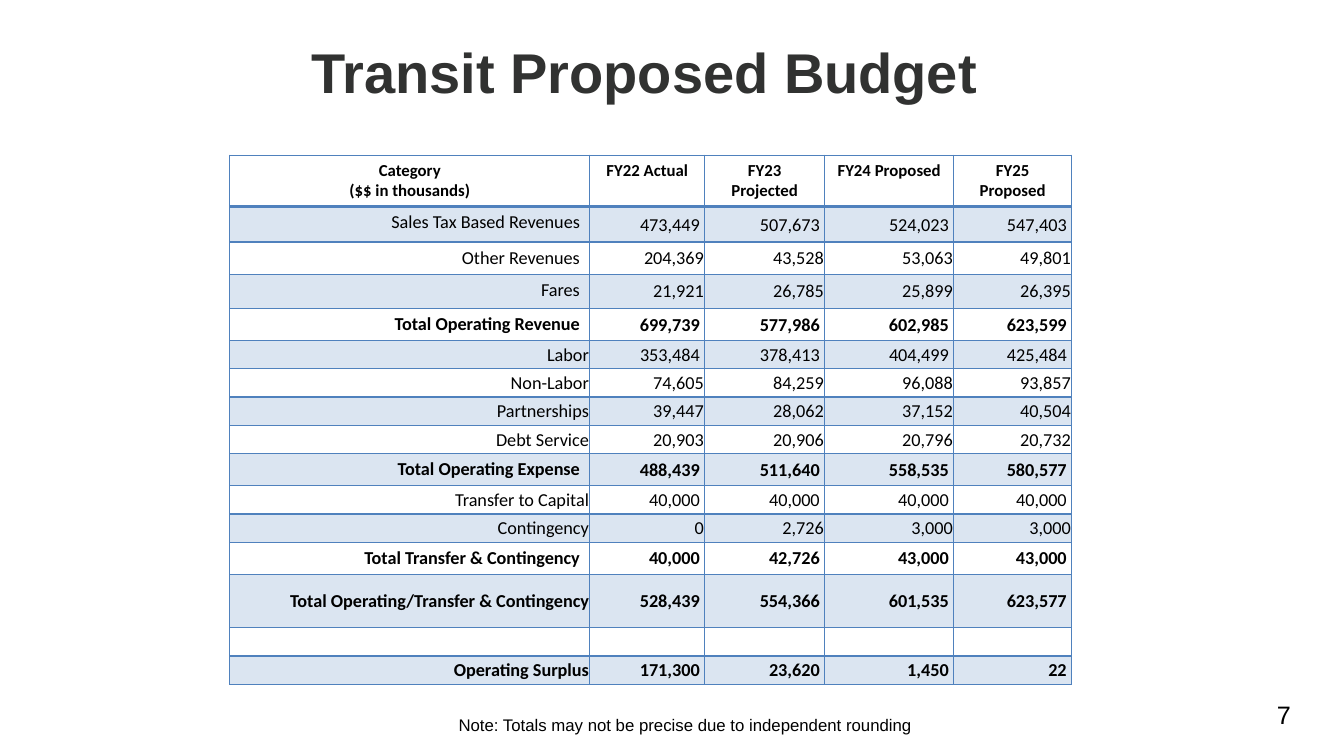
from lxml.etree import SubElement
from pptx import Presentation
from pptx.dml.color import RGBColor
from pptx.enum.text import MSO_ANCHOR as Anchor, PP_ALIGN as Align
from pptx.oxml.ns import qn
from pptx.util import Inches, Pt

COLORS = {"title": "313231", "text": "000000", "table": "4F81BD"}
ROOMY = {"margin_left": 0.1, "margin_right": 0.1, "margin_top": 0.05, "margin_bottom": 0.05}
TIGHT = {"margin_left": 0.01, "margin_right": 0.01, "margin_top": 0.01, "margin_bottom": 0}

HEADERS = ["Category\n($$ in thousands)", "FY22 Actual", "FY23 Projected",
           "FY24 Proposed", "FY25 Proposed"]
# Label, values, row height, bold, roomy label, values set in from the border
BUDGET = [
    ("Sales Tax Based Revenues", "473,449 507,673 524,023 547,403", 0.35, False, True, True),
    ("Other Revenues", "204,369 43,528 53,063 49,801", 0.32, False, True, False),
    ("Fares", "21,921 26,785 25,899 26,395", 0.34, False, True, False),
    ("Total Operating Revenue", "699,739 577,986 602,985 623,599", 0.32, True, True, True),
    ("Labor", "353,484 378,413 404,499 425,484", 0.28, False, False, True),
    ("Non-Labor", "74,605 84,259 96,088 93,857", 0.28, False, False, False),
    ("Partnerships", "39,447 28,062 37,152 40,504", 0.28, False, False, False),
    ("Debt Service", "20,903 20,906 20,796 20,732", 0.28, False, False, False),
    ("Total Operating Expense", "488,439 511,640 558,535 580,577", 0.32, True, True, True),
    ("Transfer to Capital", "40,000 40,000 40,000 40,000", 0.28, False, False, True),
    ("Contingency", "0 2,726 3,000 3,000", 0.28, False, False, False),
    ("Total Transfer & Contingency", "40,000 42,726 43,000 43,000", 0.32, True, True, True),
    ("Total Operating/Transfer & Contingency", "528,439 554,366 601,535 623,577",
     0.53, True, False, True),
    ("", "", 0.28, False, False, False),
    ("Operating Surplus", "171,300 23,620 1,450 22", 0.28, True, False, True),
]


def write(frame, text, size, font="Arial", bold=False, align=Align.LEFT, color="text"):
    """Put text in a frame, one paragraph a line, all in one format."""
    frame.text = text
    for para in frame.paragraphs:
        para.alignment = align
        for span in para.runs:
            for name, value in {"size": Pt(size), "name": font, "bold": bold}.items():
                setattr(span.font, name, value)
            span.font.color.rgb = RGBColor.from_string(COLORS[color])
        if not para.runs:
            SubElement(para._p, qn("a:endParaRPr"), sz=str(size * 100))


def style_cell(cell, margins, anchor, banded, bottom_width):
    for name, value in margins.items():
        setattr(cell, name, Inches(value))
    cell.vertical_anchor = anchor
    properties = cell._tc.get_or_add_tcPr()
    for side, width in {"L": 1, "R": 1, "T": 1, "B": bottom_width}.items():
        line = SubElement(properties, qn(f"a:ln{side}"), w=str(Pt(width)))
        SubElement(SubElement(line, qn("a:solidFill")), qn("a:srgbClr"), val=COLORS["table"])
    if banded:
        cell.fill.solid()
        cell.fill.fore_color.rgb = RGBColor.from_string(COLORS["table"])
        tint = properties.find(qn("a:solidFill")).find(qn("a:srgbClr"))
        SubElement(tint, qn("a:alpha"), val="20000")
    else:
        cell.fill.background()


deck = Presentation()
deck.slide_width, deck.slide_height = Inches(13.33), Inches(7.5)
page = deck.slides.add_slide(deck.slide_layouts[5])

# Title
title = page.shapes.title
title.left, title.top, title.width, title.height = map(Inches, (2.14, 0.16, 8.5, 1.17))
write(title.text_frame, "Transit Proposed Budget", 40, bold=True,
      align=Align.CENTER, color="title")
title.text_frame.vertical_anchor = Anchor.MIDDLE
title.text_frame.paragraphs[0].line_spacing = 0.9

# Page number
number = page.shapes.add_textbox(*map(Inches, (12.31, 6.94, 0.59, 0.4))).text_frame
number.word_wrap = True
number.margin_top = 0
write(number, "7", 18, align=Align.RIGHT)

# Budget table
heights = [0.51] + [row[2] for row in BUDGET]
table = page.shapes.add_table(len(heights), len(HEADERS), Inches(2.28), Inches(1.54),
                              Inches(8.35), Inches(sum(heights))).table
table.first_row = table.horz_banding = False
for column, width in zip(table.columns, (3.57, 1.14, 1.19, 1.28, 1.17)):
    column.width = Inches(width)
for row, height in zip(table.rows, heights):
    row.height = Inches(height)

for column, header in enumerate(HEADERS):
    cell = table.cell(0, column)
    write(cell.text_frame, header, 12, "Calibri", True, Align.CENTER)
    style_cell(cell, ROOMY, Anchor.TOP, False, 2)

for index, (label, values, _, bold, roomy, inset) in enumerate(BUDGET, start=1):
    texts = [label] + (values.split() or [""] * 4)
    for column, text in enumerate(texts):
        cell = table.cell(index, column)
        margins, anchor = TIGHT, Anchor.MIDDLE
        if column == 0 and roomy:
            margins, anchor = ROOMY, Anchor.TOP
        elif column > 0 and inset:
            margins = {**TIGHT, "margin_right": 0.05}
        write(cell.text_frame, text, 13, "Calibri", bold, Align.RIGHT)
        style_cell(cell, margins, anchor, index % 2 == 1, 1)

# Footnote
note = page.shapes.add_textbox(*map(Inches, (4.45, 7.04, 7.27, 0.3))).text_frame
note.word_wrap = True
write(note, "Note: Totals may not be precise due to independent rounding", 12)

deck.save("out.pptx")
